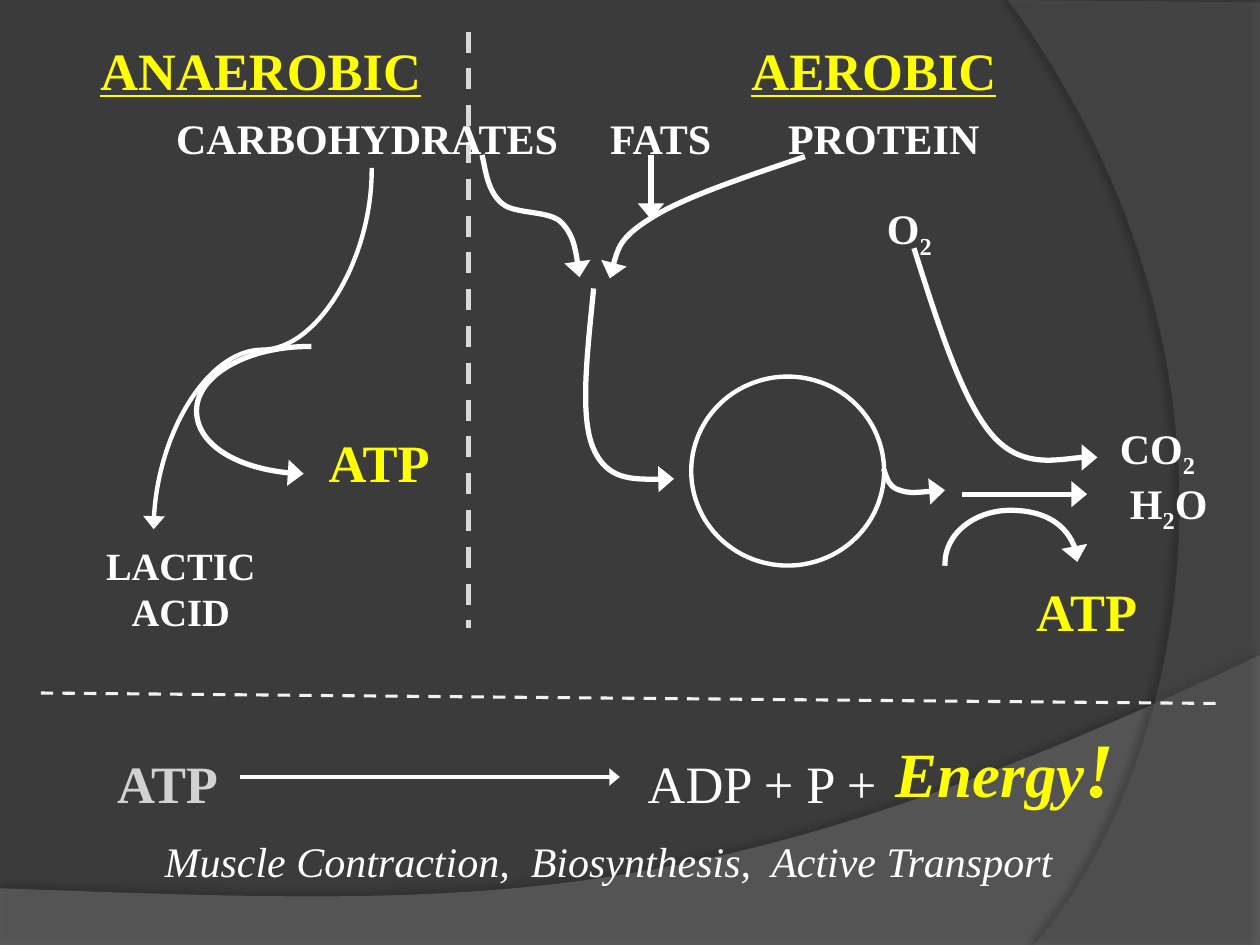
from dataclasses import dataclass
from itertools import groupby

from lxml import etree
from pptx import Presentation
from pptx import util as u
from pptx.dml.color import RGBColor
from pptx.enum import dml, shapes, text
from pptx.oxml.ns import qn


@dataclass(frozen=True)
class Theme:
    font: str = "Times New Roman"
    back: str = "3B3B3B"
    sweep: str = "7F7F7F"
    edge: str = "5E5E5E"
    shade: str = "000000"
    white: str = "FFFFFF"
    gold: str = "FFFF00"
    dim: str = "D4D2D0"
    split: str = "D9D9D9"
    base: str = "F2F2F2"
    head: int = 30
    body: int = 24
    note: int = 22
    burst: int = 36
    bang: int = 44
    thick: float = 3
    thin: float = 2.5


def rgb(code):
    return RGBColor.from_string(code)


class Deck:
    def __init__(self, theme):
        self.theme = theme
        self.file = Presentation()
        self.file.slide_width, self.file.slide_height = u.Pt(720), u.Pt(540)
        self.slide = self.file.slides.add_slide(self.file.slide_layouts[6])
        fill = self.slide.background.fill
        fill.solid()
        fill.fore_color.rgb = rgb(theme.back)

    def outline(self, start, parts, close=False):
        """Draw a path; a part is (end,) for a line, (control, control, end) for a curve."""
        pen = self.slide.shapes.build_freeform(*map(u.Pt, start), scale=1.0)
        pen.add_line_segments([tuple(map(u.Pt, part[-1])) for part in parts],
                              close=close)
        shape = pen.convert_to_shape()
        shape.shadow.inherit = False
        nodes = list(shape.element.iter(qn("a:lnTo")))
        for node, part in zip(nodes, parts):
            if len(part) == 3:
                node.tag = qn("a:cubicBezTo")
                for spot, (x, y) in enumerate(part[:2]):
                    node.insert(spot, etree.Element(
                        qn("a:pt"), x=str(u.Pt(x) - shape.left),
                        y=str(u.Pt(y) - shape.top)))
        return shape

    def stroke(self, shape, color=None, width=None, dash=False, arrow=False):
        line = shape.line
        line.fill.solid()
        line.fill.fore_color.rgb = rgb(color or self.theme.white)
        line.width = u.Pt(width or self.theme.thick)
        if dash:
            line.dash_style = dml.MSO_LINE.DASH
        if arrow:
            ln = shape.element.spPr.find(qn("a:ln"))
            ln.set("cap", "sq")
            etree.SubElement(ln, qn("a:tailEnd"), type="triangle", w="lg")

    def panel(self, start, parts, color, alpha, shade, dist, turn):
        """Draw a translucent backdrop area with a soft shadow."""
        shape = self.outline(start, parts, close=True)
        shape.line.fill.background()
        shape.fill.solid()
        shape.fill.fore_color.rgb = rgb(color)
        props = shape.element.spPr
        tint = props.find(qn("a:solidFill"))[0]
        etree.SubElement(tint, qn("a:alpha"), val=str(alpha * 1000))
        cast = etree.SubElement(
            props.find(qn("a:effectLst")), qn("a:outerShdw"),
            blurRad=str(u.Pt(4)), dist=str(u.Pt(dist)), dir=str(turn * 60000))
        dark = etree.SubElement(cast, qn("a:srgbClr"), val=self.theme.shade)
        etree.SubElement(dark, qn("a:alpha"), val=str(shade * 1000))

    def curve(self, start, *parts):
        shape = self.outline(start, parts)
        shape.fill.background()
        self.stroke(shape, arrow=True)

    def line(self, start, end, kind=shapes.MSO_CONNECTOR.STRAIGHT, **style):
        ends = map(u.Pt, (*start, *end))
        link = self.slide.shapes.add_connector(kind, *ends)
        self.stroke(link, **style)
        etree.SubElement(link.element.spPr, qn("a:effectLst"))
        return link

    def ring(self, *box):
        shape = self.slide.shapes.add_shape(shapes.MSO_SHAPE.OVAL, *map(u.Pt, box))
        shape.shadow.inherit = False
        shape.fill.background()
        self.stroke(shape, width=self.theme.thin)

    def label(self, words, box, size=None, color=None, bold=True, italic=False,
              under=False, center=True, wrap=True):
        frame = self.slide.shapes.add_textbox(*map(u.Pt, box)).text_frame
        frame.word_wrap = wrap
        frame.auto_size = text.MSO_AUTO_SIZE.SHAPE_TO_FIT_TEXT
        para = frame.paragraphs[0]
        para.alignment = text.PP_ALIGN.CENTER if center else text.PP_ALIGN.LEFT
        font = para.font
        font.name, font.size = self.theme.font, u.Pt(size or self.theme.body)
        font.bold, font.italic, font.underline = bold, italic, under
        font.color.rgb = rgb(color or self.theme.white)
        if words:
            para.add_run().text = words
        return para

    def formula(self, words, box):
        """Write a chemical formula with its digits as subscripts."""
        para = self.label("", box, center=False)
        for low, part in groupby(words, str.isdigit):
            run = para.add_run()
            run.text = "".join(part)
            if low:
                run._r.get_or_add_rPr().set("baseline", "-25000")

    def save(self):
        self.file.save("out.pptx")


def main():
    look = Theme()
    deck = Deck(look)

    deck.panel((0, 507.6), [((0, 540),), ((720, 540),), ((720, 374.4),),
                            ((402.5, 525), (281.5, 517.7), (0, 507.6))],
               look.sweep, 45, 35, 3.5, 270)
    deck.panel((720, 1.4), [((720, 540),), ((591, 540),),
                            ((673.2, 445.7), (733, 216), (576, 0))],
               look.edge, 40, 45, 4, 180)

    deck.formula("H2O", (638.6, 269.3, 70, 26.6))
    deck.line((267.6, 18), (267.6, 359), color=look.split, dash=True)
    for words, box in (("ANAEROBIC", (36, 18, 226, 44)),
                       ("AEROBIC", (395, 18, 208.8, 44))):
        deck.label(words, box, look.head, look.gold, under=True)
    for words, left, width in (("CARBOHYDRATES", 93.6, 237.6),
                               ("FATS", 313.9, 127.4),
                               ("PROTEIN", 429.8, 150.5)):
        deck.label(words, (left, 60.5, width, 36.7), center=left > 100)

    lactic = deck.line((47.5, 137.5), (252.7, 262.1), shapes.MSO_CONNECTOR.CURVE,
                       width=look.thin, arrow=True)
    lactic.element.spPr.find(qn("a:xfrm")).set("rot", str(90 * 60000))
    deck.label("LACTIC ACID", (23.8, 306, 159, 31.7), look.note)
    deck.curve((176.4, 198), ((141.1, 198), (112.3, 214.6), (112.3, 234.7)),
               ((112.3, 254.2), (139.7, 270), (173.5, 270.7)))
    deck.label("ATP", (180.7, 241.9, 81.4, 32.4), look.head, look.gold,
               center=False)

    deck.curve((275.8, 90), ((277.9, 100.1), (279.4, 110.2), (287.3, 116.6)),
               ((294.5, 122.4), (313.2, 120.2), (320.4, 126.7)),
               ((327.6, 133.9), (329.8, 146.2), (331.2, 158.4)))
    deck.line((372, 90), (372, 125.3), arrow=True)
    deck.curve((458.6, 90), ((424.8, 101.5), (390.2, 113), (372.2, 124.6)),
               ((353.5, 136.1), (351.4, 147.6), (348.5, 159.1)))
    deck.ring(395, 215.2, 110.2, 108)
    deck.curve((339.1, 166.3), ((335.5, 202.3), (331.2, 238.3), (339.1, 256.3)),
               ((347, 274.3), (365.8, 274.3), (385.2, 273.6)))
    deck.curve((505.4, 269.3), ((506.9, 273.6), (508.3, 278.6), (514.1, 280.1)),
               ((519.8, 282.2), (529.9, 280.8), (540, 280.1)))
    deck.line((551.5, 282.4), (621.2, 282.4), arrow=True)

    deck.formula("O2", (499.7, 112.3, 46, 27.4))
    deck.curve((522.7, 143.3), ((536.4, 186.5), (550.1, 229.7), (567.4, 249.1)),
               ((584.6, 268.6), (617, 259.9), (627.1, 261.4)))
    deck.formula("CO2", (632.9, 237.6, 64, 27.4))
    deck.curve((540, 321.8), ((540, 305.3), (556.6, 291.6), (577.4, 291.6)),
               ((598.3, 291.6), (615.6, 304.6), (615.6, 321.1)))
    deck.label("ATP", (580.3, 327.6, 81.4, 32.4), look.head, look.gold)

    split = deck.label("ATP", (59.8, 425.5, 660, 44), look.head, look.dim,
                       center=False)
    props = split._p.get_or_add_pPr()
    stops = etree.Element(qn("a:tabLst"))
    etree.SubElement(stops, qn("a:tab"), pos=str(u.Pt(303.2)), algn="l")
    props.insert(0, stops)
    rest = split.add_run()
    rest.text, rest.font.bold = "\tADP + P +", False
    rest.font.color.rgb = rgb(look.white)
    energy = deck.label("Energy", (504, 408.2, 141, 60.5), look.burst, look.gold,
                        italic=True, wrap=False)
    bang = energy.add_run()
    bang.text, bang.font.size = "!", u.Pt(look.bang)
    deck.line((138.2, 444), (354.2, 444), width=2, arrow=True)
    deck.label("Muscle Contraction,  Biosynthesis,  Active Transport",
               (59.8, 473.8, 576, 36.7), bold=False, italic=True)
    deck.line((23.4, 396), (695.4, 402), color=look.base, width=1.75, dash=True)
    deck.save()


if __name__ == "__main__":
    main()
